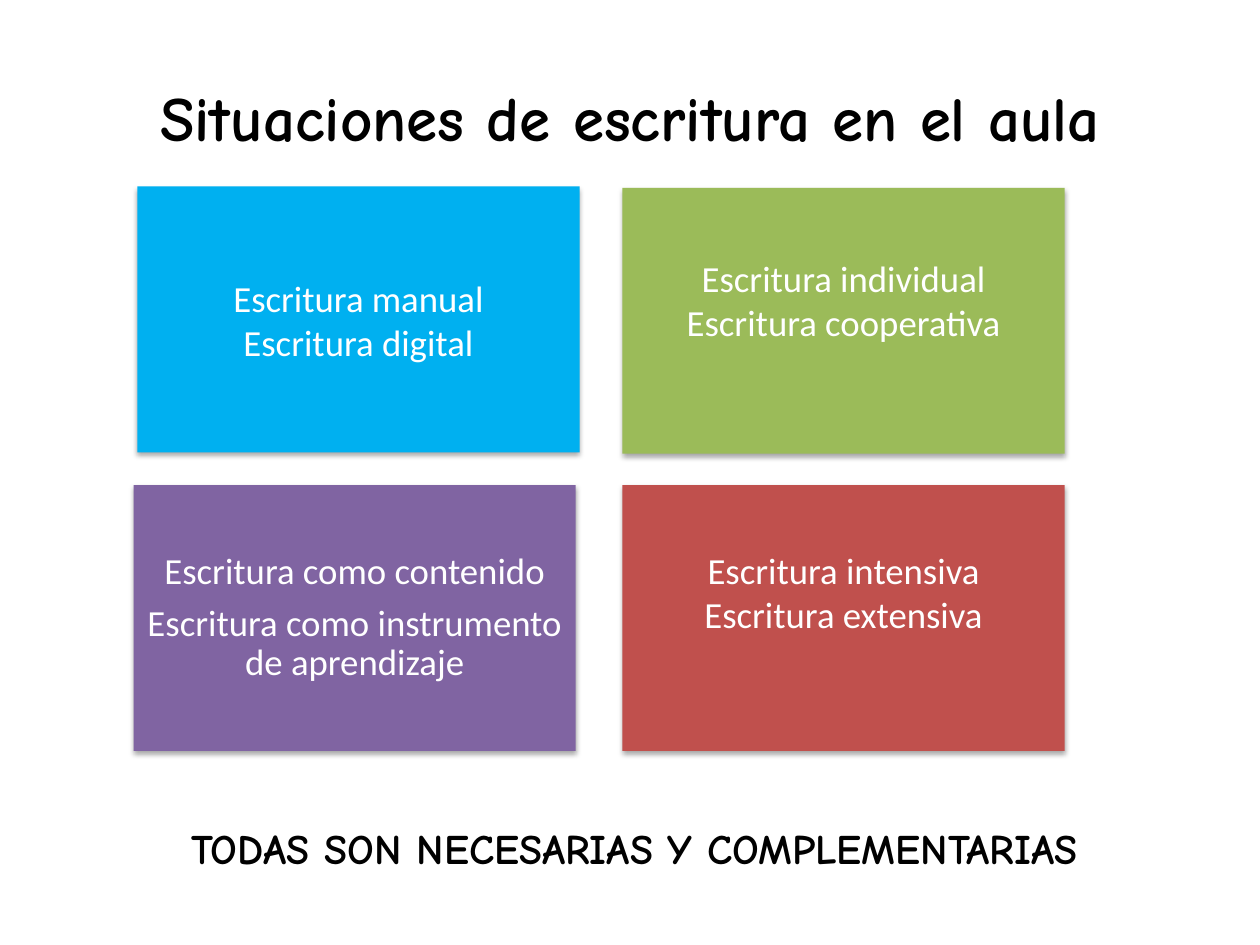
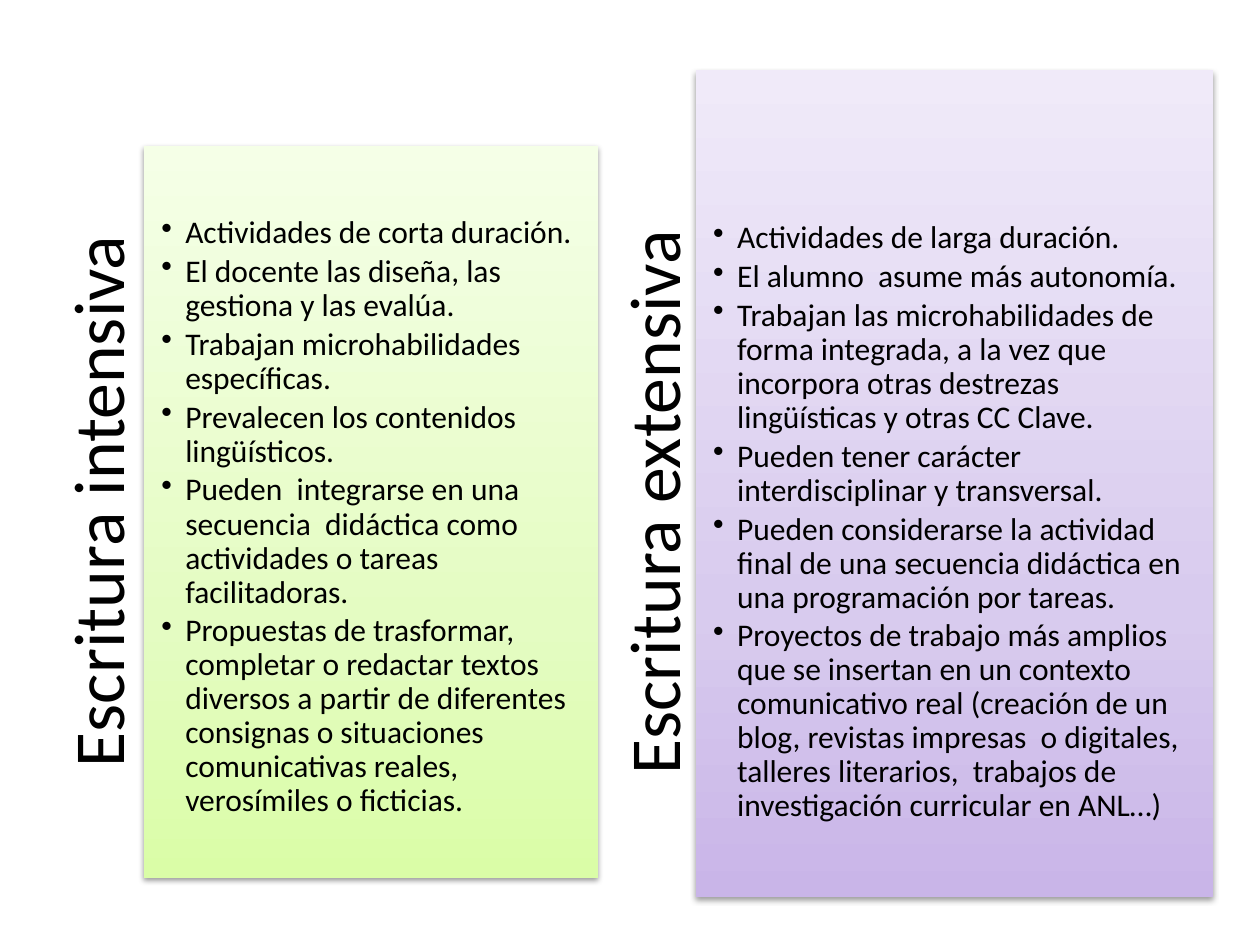
from dataclasses import dataclass

from copy import deepcopy
from lxml.etree import SubElement
from pptx import Presentation
from pptx.dml.color import RGBColor as RGB
from pptx.enum.shapes import MSO_SHAPE as SHAPE
from pptx.enum.text import MSO_ANCHOR as ANCHOR, PP_ALIGN as ALIGN
from pptx.oxml.ns import qn
from pptx.util import Inches, Pt


@dataclass(frozen=True)
class Theme:
    hand: str = "Comic Neue"
    body: str = "Calibri"
    ink: str = "000000"
    paper: str = "FFFFFF"
    blue: str = "00B0F0"
    green: str = "9BBB59"
    purple: str = "8064A2"
    red: str = "C0504D"
    lime_fade: tuple = ("DAFDA7", "E4FCC2", "F5FFE7")
    lilac_fade: tuple = ("C9B5E8", "D8CBEE", "F0EAF9")
    fade_stops: tuple = (0, 0.35, 1)
    title: int = 36
    closing: int = 24
    card: int = 21
    label: int = 41
    bullet: int = 18


T = Theme()


def put_text(sp, lines, size, font=T.body, color=T.ink, bold=False, align=ALIGN.LEFT,
             anchor=ANCHOR.TOP, inset=(0.1, 0.05, 0.1, 0.05), spacing=1.0, after=0, bullets=False):
    """Write one paragraph per line; inset is left, top, right, bottom in inches."""
    tf = sp.text_frame
    tf.word_wrap = True
    tf.vertical_anchor = anchor
    tf.margin_left, tf.margin_top, tf.margin_right, tf.margin_bottom = map(Inches, inset)
    for i, line in enumerate(lines):
        p = tf.paragraphs[0] if i == 0 else tf.add_paragraph()
        p.alignment, p.line_spacing, p.space_after = align, spacing, Pt(after)
        if bullets:
            pPr = p._p.get_or_add_pPr()
            pPr.set("marL", str(Inches(0.19)))
            pPr.set("indent", str(-Inches(0.19)))
            SubElement(pPr, qn("a:buChar")).set("char", "•")
        r = p.add_run()
        r.text = line
        r.font.name, r.font.size, r.font.bold = font, Pt(size), bold
        r.font.color.rgb = RGB.from_string(color)


def add_text(slide, box, lines, rotation=0, **fmt):
    sp = slide.shapes.add_textbox(*map(Inches, box))
    sp.rotation = rotation
    put_text(sp, lines, **fmt)


def add_shadow(sp, opacity):
    sp.shadow.inherit = False
    effects = sp._element.spPr.find(qn("a:effectLst"))
    shadow = SubElement(effects, qn("a:outerShdw"), blurRad=str(Pt(3.1)), dist=str(Pt(1.8)),
                        dir="5400000", rotWithShape="0")
    black = SubElement(shadow, qn("a:srgbClr"), val=T.ink)
    SubElement(black, qn("a:alpha"), val=str(opacity * 1000))


def add_block(slide, box, fill, opacity):
    """Borderless rectangle, filled with one colour or a fade from the bottom up."""
    sp = slide.shapes.add_shape(SHAPE.RECTANGLE, *map(Inches, box))
    sp.line.fill.background()
    if isinstance(fill, str):
        sp.fill.solid()
        sp.fill.fore_color.rgb = RGB.from_string(fill)
    else:
        sp.fill.gradient()
        sp.fill.gradient_angle = 90
        stops = next(sp._element.spPr.iter(qn("a:gsLst")))
        stops.insert(1, deepcopy(stops[0]))
        for stop, color, position in zip(sp.fill.gradient_stops, fill, T.fade_stops):
            stop.color.rgb = RGB.from_string(color)
            stop.position = position
    add_shadow(sp, opacity)
    return sp


def add_card(slide, left, top, fill, lines, lift=0, **fmt):
    """Coloured card; lift raises its centred text."""
    sp = add_block(slide, (left, top, 3.51, 2.11), fill, 35)
    put_text(sp, lines, size=T.card, color=T.paper, align=ALIGN.CENTER, anchor=ANCHOR.MIDDLE,
             inset=(0.09, 0.09, 0.09, 0.09 + lift), **fmt)


def add_panel(slide, box, fade, items, top_inset=0.56):
    sp = add_block(slide, box, fade, 38)
    put_text(sp, items, size=T.bullet, inset=(0.14, top_inset, 0.14, 0.14),
             spacing=0.9, after=2.7, bullets=True)


def add_side_label(slide, left, top, length, text, depth=0.64):
    """Label read upwards, inside the upright strip that starts at left, top."""
    box = (left + (depth - length) / 2, top + (length - depth) / 2, length, depth)
    add_text(slide, box, [text], rotation=270, size=T.label, align=ALIGN.RIGHT,
             inset=(0, 0, 0.56, 0), spacing=0.9)


def build_situations(slide):
    heading = dict(font=T.hand, bold=True, align=ALIGN.CENTER)
    add_text(slide, (0.5, 0.3, 9, 1.25), ["Situaciones de escritura en el aula"],
             size=T.title, anchor=ANCHOR.MIDDLE, **heading)

    # Four kinds of situation
    add_card(slide, 1.09, 1.48, T.blue, ["Escritura manual", "Escritura digital"])
    add_card(slide, 4.94, 1.49, T.green, ["Escritura individual", "Escritura cooperativa"],
             lift=0.33)
    add_card(slide, 1.06, 3.85, T.purple,
             ["Escritura como contenido", "Escritura como instrumento de aprendizaje"],
             spacing=0.9, after=7)
    add_card(slide, 4.94, 3.85, T.red, ["Escritura intensiva", "Escritura extensiva"], lift=0.42)

    # Closing line
    add_text(slide, (0.62, 6.48, 8.83, 0.5), ["TODAS SON NECESARIAS Y COMPLEMENTARIAS"],
             size=T.closing, **heading)


def build_comparison(slide):
    # Intensive writing
    add_side_label(slide, 0.5, 1.31, 5.54, "Escritura intensiva")
    add_panel(slide, (1.14, 1.16, 3.61, 5.81), T.lime_fade, [
        "Actividades de corta duración.",
        "El docente las diseña, las gestiona y las evalúa.",
        "Trabajan microhabilidades específicas.",
        "Prevalecen los contenidos lingüísticos.",
        "Pueden  integrarse en una secuencia  didáctica como actividades o tareas facilitadoras.",
        "Propuestas de trasformar, completar o redactar textos diversos a partir de diferentes  "
        "consignas o situaciones comunicativas reales, verosímiles o ficticias.",
    ])

    # Extensive writing
    add_side_label(slide, 4.91, 1.27, 5.26, "Escritura extensiva")
    add_panel(slide, (5.52, 0.56, 4.11, 6.56), T.lilac_fade, [
        "Actividades de larga duración.",
        "El alumno  asume más autonomía.",
        "Trabajan las microhabilidades de forma integrada, a la vez que incorpora otras "
        "destrezas lingüísticas y otras CC Clave.",
        "Pueden tener carácter interdisciplinar y transversal.",
        "Pueden considerarse la actividad final de una secuencia didáctica en una "
        "programación por tareas.",
        "Proyectos de trabajo más amplios que se insertan en un contexto comunicativo real "
        "(creación de un blog, revistas impresas  o digitales, talleres literarios,  "
        "trabajos de investigación curricular en ANL…)",
    ], top_inset=1.2)


def main():
    prs = Presentation()
    prs.slide_width, prs.slide_height = Inches(10), Inches(7.5)
    for build in (build_situations, build_comparison):
        build(prs.slides.add_slide(prs.slide_layouts[6]))
    prs.save("out.pptx")


if __name__ == "__main__":
    main()
